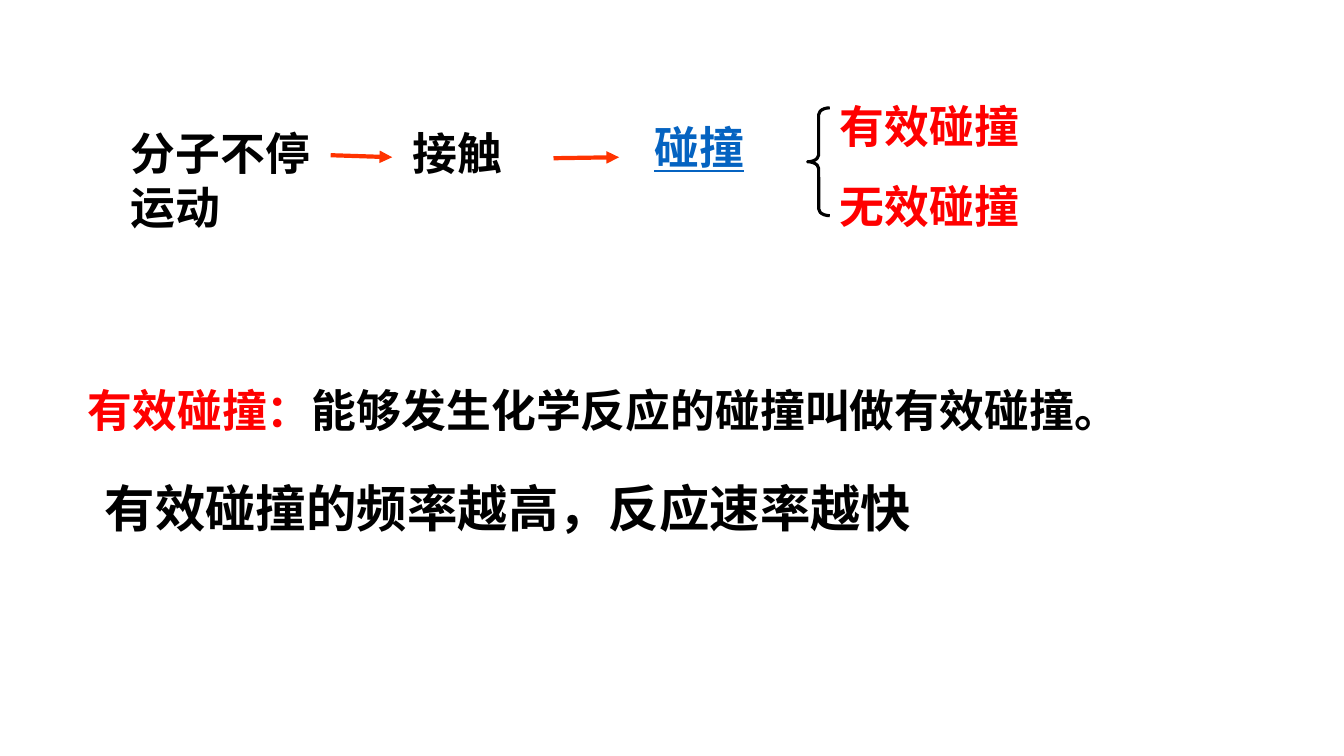
"""Build a slide on effective molecular collisions and reaction rate."""
from dataclasses import dataclass

from lxml import etree
from pptx import Presentation
from pptx.dml.color import RGBColor
from pptx.enum.shapes import MSO_CONNECTOR, MSO_SHAPE
from pptx.enum.text import MSO_AUTO_SIZE
from pptx.oxml.ns import qn
from pptx.slide import Slide
from pptx.util import Inches, Pt

STRAIGHT = MSO_CONNECTOR.STRAIGHT
LEFT_BRACE = MSO_SHAPE.LEFT_BRACE
GROW = MSO_AUTO_SIZE.SHAPE_TO_FIT_TEXT
HAN_FONT = "Noto Sans CJK SC"
LATIN_FONT = "Times New Roman"
COLORS = {"black": "000000", "red": "FF0000", "link": "0563C1", "arrow": "FF3300"}


@dataclass(frozen=True)
class Phrase:
    text: str
    color: str = "black"
    font: str = HAN_FONT
    underline: bool = False


@dataclass(frozen=True)
class Label:
    box: tuple[float, float, float, float]
    paragraphs: tuple[tuple[Phrase, ...], ...]
    size: int = 32
    wrap: bool = True
    spacing: float = 1.0


@dataclass(frozen=True)
class Arrow:
    start: tuple[float, float]
    end: tuple[float, float]


LABELS = (
    Label((0.77, 3.75, 10.42, 0.64),
          ((Phrase("有效碰撞：", "red"),
            Phrase("能够发生化学反应的碰撞叫做有效碰撞。", font=LATIN_FONT)),),
          wrap=False),
    Label((1.2, 1.2, 2.19, 1.18), ((Phrase("分子不停运动"),),)),
    Label((3.99, 1.2, 1.33, 0.64), ((Phrase("接触"),),)),
    Label((6.39, 1.14, 1.38, 0.64), ((Phrase("碰撞", "link", underline=True),),)),
    Label((8.23, 0.66, 1.99, 1.72),
          ((Phrase("有效碰撞", "red"),), (Phrase("无效碰撞", "red"),)),
          wrap=False, spacing=1.5),
    Label((0.94, 4.68, 8.21, 0.71),
          ((Phrase("有效碰撞的频率越高，反应速率越快", font=LATIN_FONT),),),
          size=36, wrap=False),
)
ARROWS = (Arrow((3.28, 1.54), (3.89, 1.56)), Arrow((5.49, 1.57), (6.14, 1.56)))


def rgb(name: str) -> RGBColor:
    """Look up a named colour."""
    return RGBColor.from_string(COLORS[name])


def add_label(s: Slide, label: Label) -> None:
    """Add a text box with its formatted phrases."""
    tf = s.shapes.add_textbox(*map(Inches, label.box)).text_frame
    tf.word_wrap = label.wrap
    tf.auto_size = GROW
    for i, phrases in enumerate(label.paragraphs):
        p = tf.add_paragraph() if i else tf.paragraphs[0]
        p.line_spacing = label.spacing
        for phrase in phrases:
            r = p.add_run()
            r.text = phrase.text
            r.font.size = Pt(label.size)
            r.font.bold = True
            r.font.underline = phrase.underline
            r.font.name = phrase.font
            r.font.color.rgb = rgb(phrase.color)
            etree.SubElement(r.font._element, qn("a:ea"), typeface=HAN_FONT)


def add_arrow(s: Slide, arrow: Arrow) -> None:
    """Add a line ending in a triangular head."""
    line = s.shapes.add_connector(STRAIGHT, *map(Inches, arrow.start + arrow.end))
    line.line.color.rgb = rgb("arrow")
    line.line.width = Pt(3)
    etree.SubElement(line.line._get_or_add_ln(), qn("a:tailEnd"), type="triangle")
    etree.SubElement(line._element.spPr, qn("a:effectLst"))


def add_brace(s: Slide) -> None:
    """Add the brace that opens the two kinds of collision."""
    brace = s.shapes.add_shape(LEFT_BRACE, *map(Inches, (8.01, 1.07, 0.22, 1.07)))
    brace.adjustments[0] = 0.305
    brace.adjustments[1] = 0.5
    brace.shadow.inherit = False
    brace.fill.background()
    brace.line.color.rgb = rgb("black")
    brace.line.width = Pt(2.25)


def main() -> None:
    """Create and save the slide."""
    prs = Presentation()
    prs.slide_width, prs.slide_height = Inches(13.33), Inches(7.5)
    s = prs.slides.add_slide(prs.slide_layouts[6])
    for label in LABELS:
        add_label(s, label)
    for arrow in ARROWS:
        add_arrow(s, arrow)
    add_brace(s)
    prs.save("out.pptx")


if __name__ == "__main__":
    main()
